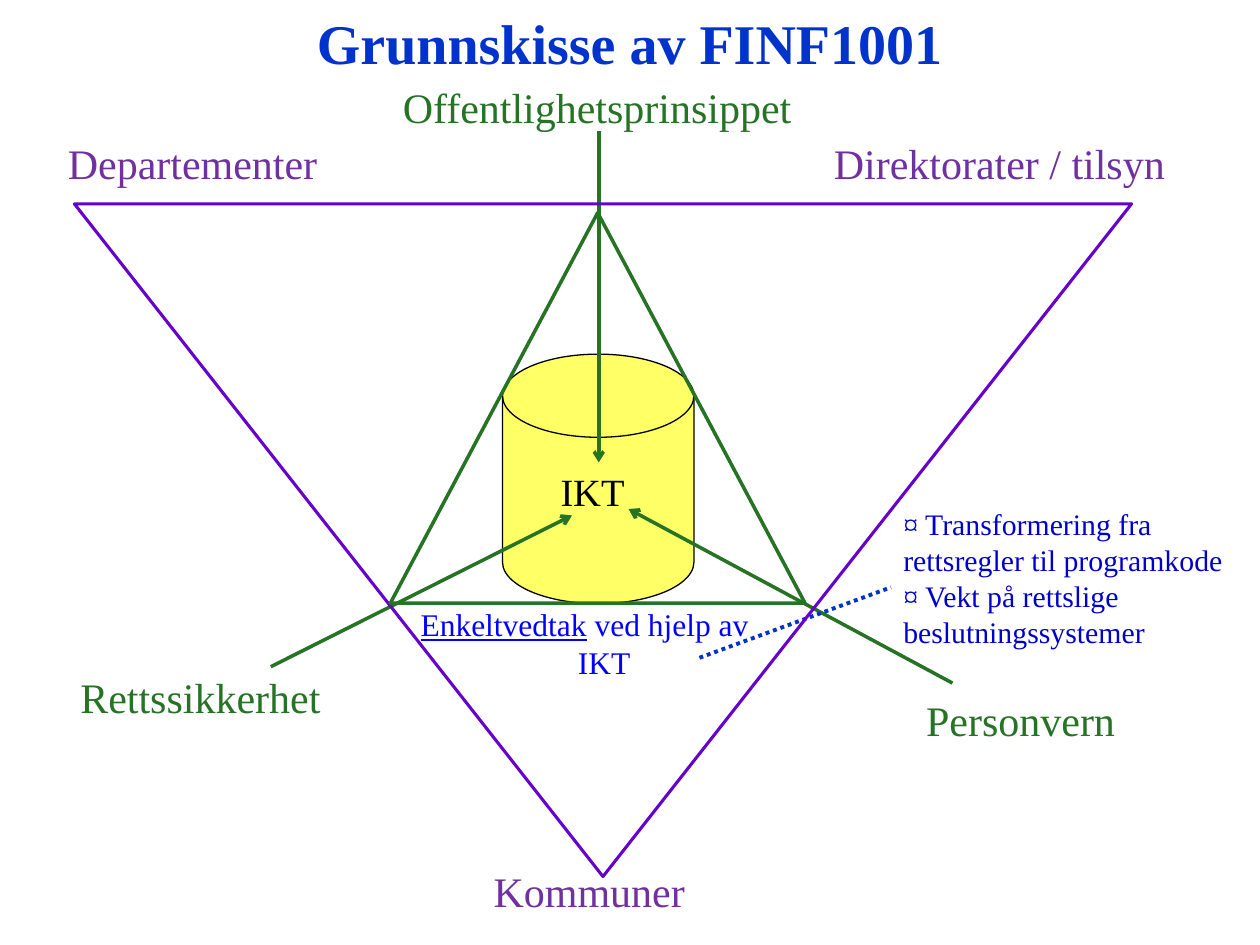
import pptx
import pptx.util
import pptx.dml.color
import pptx.enum.dml
import pptx.enum.shapes
import pptx.enum.text
import pptx.oxml.ns
from dataclasses import dataclass
from lxml import etree
from pptx.util import Cm

SHAPES = pptx.enum.shapes.MSO_SHAPE
DOTTED = pptx.enum.dml.MSO_LINE.ROUND_DOT


@dataclass(frozen=True)
class Theme:
    font: str = "Times New Roman"
    title_blue: str = "0033CC"
    note_blue: str = "0000CC"
    link_blue: str = "0000FF"
    green: str = "267326"
    purple: str = "7030A0"
    violet: str = "6600CC"
    yellow: str = "FFFF66"
    black: str = "000000"
    title_size: int = 32
    label_size: int = 24
    core_size: int = 22
    caption_size: int = 18
    note_size: int = 17


THEME = Theme()

TITLE = "Grunnskisse av FINF1001"
# Places are left, top, width, height in centimetres.
PRINCIPLES = [
    ("Rettssikkerhet", (1.37, 13.41, 5.36, 1.27)),
    ("Personvern", (18.42, 13.87, 4.32, 1.27)),
    ("Offentlighetsprinsippet", (7.87, 1.52, 8.36, 1.27)),
]
AUTHORITIES = [
    ("Departementer", (1.12, 2.64, 5.54, 1.27)),
    ("Direktorater / tilsyn", (16.56, 2.64, 7.19, 1.27)),
    ("Kommuner", (9.7, 17.32, 4.37, 1.27)),
]
# Arrows run from a principle to the core: x, y of start and end.
ARROWS = [
    (5.46, 13.44, 11.53, 10.39),
    (19.2, 13.77, 12.67, 10.26),
    (12.07, 2.64, 12.07, 9.32),
]
NOTE_LINK = (14.1, 13.26, 17.96, 11.84)
# A paragraph is a list of lines.
NOTES = [
    ["¤ Transformering fra", "rettsregler til programkode"],
    ["¤ Vekt på rettslige", "beslutningssystemer"],
]


def colour(code):
    return pptx.dml.color.RGBColor.from_string(code)


def write(para, text, size, color, bold=False, underline=False):
    span = para.add_run()
    span.text = text
    span.font.name = THEME.font
    span.font.size = pptx.util.Pt(size)
    span.font.color.rgb = colour(color)
    span.font.bold = bold
    span.font.underline = underline
    return span


def add_box(page, place, wrap=False):
    box = page.shapes.add_textbox(*map(Cm, place))
    box.text_frame.word_wrap = wrap
    return box


def add_label(page, text, place, color, size=THEME.label_size):
    box = add_box(page, place)
    write(box.text_frame.paragraphs[0], text, size, color)
    return box


def add_outline(page, kind, place, color, width, fill=None):
    shape = page.shapes.add_shape(kind, *map(Cm, place))
    shape.shadow.inherit = False
    if fill:
        shape.fill.solid()
        shape.fill.fore_color.rgb = colour(fill)
    else:
        shape.fill.background()
    shape.line.color.rgb = colour(color)
    shape.line.width = pptx.util.Pt(width)
    return shape


def add_line(page, ends, color, width, dash=None, arrow=False):
    line = page.shapes.add_connector(
        pptx.enum.shapes.MSO_CONNECTOR.STRAIGHT, *map(Cm, ends))
    line.line.color.rgb = colour(color)
    line.line.width = pptx.util.Pt(width)
    if dash:
        line.line.dash_style = dash
    if arrow:
        etree.SubElement(line.line._get_or_add_ln(),
                         pptx.oxml.ns.qn("a:tailEnd"), type="arrow")
    etree.SubElement(line._element.spPr, pptx.oxml.ns.qn("a:effectLst"))


def add_title(page):
    title = page.shapes.title
    title.left, title.top, title.width, title.height = map(
        Cm, (1.9, 0, 21.6, 1.7))
    frame = title.text_frame
    frame.vertical_anchor = pptx.enum.text.MSO_ANCHOR.MIDDLE
    para = frame.paragraphs[0]
    para.alignment = pptx.enum.text.PP_ALIGN.CENTER
    write(para, TITLE, THEME.title_size, THEME.title_blue, bold=True)


def add_core(page):
    add_outline(page, SHAPES.FLOWCHART_MAGNETIC_DISK,
                (10.13, 7.14, 3.86, 5.03), THEME.black, 0.75, THEME.yellow)
    box = add_label(page, "IKT", (11.05, 9.32, 2.29, 1.19),
                    THEME.black, THEME.core_size)
    box.text_frame.word_wrap = True
    box.fill.solid()
    box.fill.fore_color.rgb = colour(THEME.yellow)


def add_caption(page):
    frame = add_box(page, (8.23, 12.07, 7.39, 1.8), wrap=True).text_frame
    style = {"size": THEME.caption_size, "color": THEME.link_blue}
    first = frame.paragraphs[0]
    write(first, "Enkeltvedtak", underline=True, **style)
    write(first, " ved hjelp av", **style)
    second = frame.add_paragraph()
    second._p.get_or_add_pPr().set("marL", str(Cm(3.17)))
    write(second, "IKT", **style)


def add_notes(page):
    frame = add_box(page, (17.96, 10.08, 6.99, 3.18)).text_frame
    for index, lines in enumerate(NOTES):
        para = frame.add_paragraph() if index else frame.paragraphs[0]
        for row, text in enumerate(lines):
            if row:
                para.add_line_break()
            write(para, text, THEME.note_size, THEME.note_blue)


def main():
    deck = pptx.Presentation()
    deck.slide_width, deck.slide_height = Cm(25.4), Cm(19.05)
    page = deck.slides.add_slide(deck.slide_layouts.get_by_name("Title Only"))

    add_title(page)
    add_core(page)
    for ends in ARROWS:
        add_line(page, ends, THEME.green, 2, arrow=True)
    for text, place in PRINCIPLES:
        add_label(page, text, place, THEME.green)
    add_caption(page)
    add_notes(page)
    add_line(page, NOTE_LINK, THEME.title_blue, 2.25, dash=DOTTED)
    for text, place in AUTHORITIES:
        add_label(page, text, place, THEME.purple)
    outer = add_outline(page, SHAPES.ISOSCELES_TRIANGLE,
                        (1.5, 4.11, 21.31, 13.56), THEME.violet, 1.75)
    outer.rotation = 180
    add_outline(page, SHAPES.ISOSCELES_TRIANGLE,
                (7.87, 4.29, 8.36, 7.87), THEME.green, 2)

    deck.save("out.pptx")


if __name__ == "__main__":
    main()
